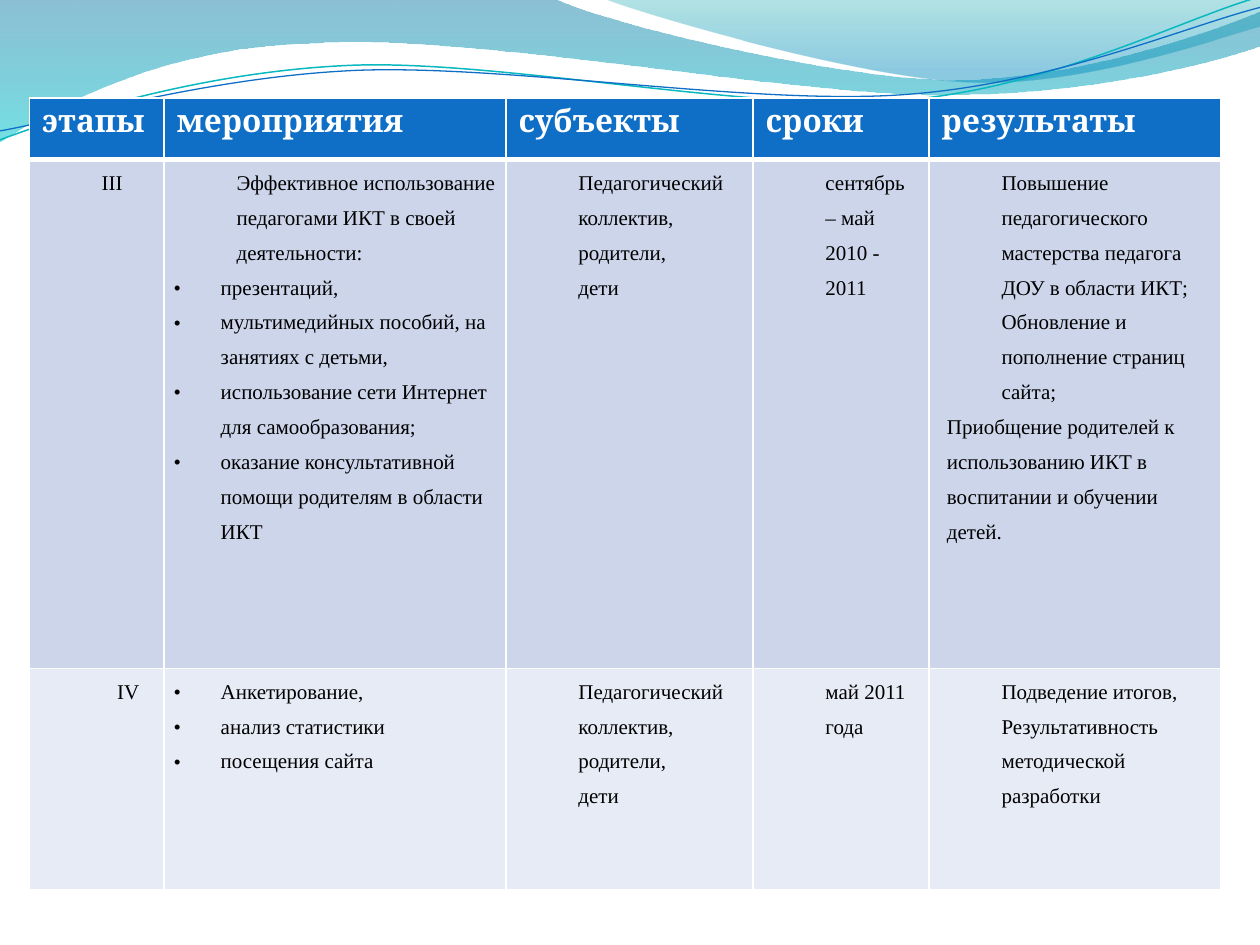
from math import cos, radians, sin

from lxml.etree import SubElement
from pptx import Presentation
from pptx.dml.color import RGBColor
from pptx.enum.text import PP_ALIGN as Align
from pptx.oxml import parse_xml
from pptx.oxml.ns import nsdecls, qn
from pptx.util import Cm, Pt

COLORS = {
    "blue": "0F6FC6", "teal": "0AB8BF", "white": "FFFFFF", "black": "000000",
    "row_dark": "CCD5EA", "row_light": "E7EBF5",
    "band_top": "0074A1", "band_bottom": "00C6CF",
    "corner_top": "00A1A9", "corner_bottom": "008BBF",
}

# Table content: each body cell is a list of (style, text) paragraphs
HEADERS = ["этапы", "мероприятия", "субъекты", "сроки", "результаты"]
SUBJECTS = [("indented", "Педагогический коллектив,"),
            ("indented", "родители,"), ("indented", "дети")]
BODY = [
    [
        [("indented", "III")],
        [("indented", "Эффективное использование педагогами ИКТ в своей деятельности:"),
         ("bullet", "презентаций,"),
         ("bullet", "мультимедийных пособий, на занятиях с детьми,"),
         ("bullet", "использование сети Интернет для самообразования;"),
         ("bullet", "оказание консультативной помощи родителям в области ИКТ")],
        SUBJECTS,
        [("indented", "сентябрь – май 2010 - 2011")],
        [("indented", "Повышение педагогического мастерства педагога ДОУ в области ИКТ;"),
         ("indented", "Обновление и пополнение страниц сайта;"),
         ("flush", "Приобщение родителей к использованию ИКТ в воспитании и обучении детей.")],
    ],
    [
        [("centered", "IV")],
        [("bullet", "Анкетирование,"), ("bullet", "анализ статистики"),
         ("bullet", "посещения сайта")],
        SUBJECTS,
        [("indented", "май 2011 года")],
        [("indented", "Подведение итогов,"),
         ("indented", "Результативность методической разработки")],
    ],
]
COLUMN_WIDTHS = [2.72, 6.89, 4.98, 3.55, 5.87]
ROW_HEIGHTS = [1.24, 10.26, 4.45]
ROW_FILLS = ["blue", "row_dark", "row_light"]

# Style: left margin and first-line indent in cm, alignment
STYLES = {
    "indented": (1.27, 0, None),
    "centered": (1.27, 0, Align.CENTER),
    "flush": (0.17, 0, None),
    "bullet": (0.95, -0.95, None),
}

# Outlines in cm: a start point, then lines (one point) or curves (three points)
BAND = [
    [(0, 0)], [(11.18, -0.03)],
    [(12.09, 0.43), (16.87, 1.6), (19.25, 1.6)],
    [(21.67, 1.6), (24.33, 0.66), (25.4, 0.23)],
    [(25.43, 0.91)],
    [(24.97, 1.12), (22.1, 1.93), (18.95, 1.91)],
    [(15.8, 1.91), (9.7, 0.71), (6.53, 0.86)],
    [(3.28, 0.91), (1.17, 2.11), (-0.03, 2.87)],
    [(0, 0)],
]
CORNER = [
    [(12.17, -0.03)],
    [(12.93, 0.28), (17.32, 1.57), (19.53, 1.65)],
    [(21.74, 1.75), (24.41, 0.81), (25.4, 0.53)],
    [(25.4, 0)], [(12.17, -0.03)],
]
TEAL_WAVE = [
    [(0, 2.82)],
    [(1.22, 2.36), (4.01, 1.45), (7.04, 1.32)],
    [(10.03, 1.19), (15.06, 2.26), (18.11, 2.03)],
    [(21.16, 1.8), (23.83, 0.38), (25.35, -0.05)],
]
BLUE_WAVE = [
    [(0, 2.64)],
    [(1.19, 2.44), (4.17, 1.55), (7.19, 1.42)],
    [(10.24, 1.3), (15.16, 2.13), (18.21, 1.91)],
    [(21.23, 1.7), (23.9, 0.53), (25.4, 0.15)],
]
# Outline, frame (left, top, width, height), gradient stops (position, colour, opacity)
GRADIENT_SHAPES = [
    (BAND, (-0.03, -0.03, 25.45, 2.9), [(0, "band_top", 45), (1, "band_bottom", 55)]),
    (CORNER, (12.17, -0.03, 13.23, 1.78), [(0, "corner_top", 30), (0.8, "corner_bottom", 45)]),
]
# Outline, frame, line colour and width
WAVES = [
    (TEAL_WAVE, (-0.05, 0.56, 25.45, 1.8), "teal", 0.85),
    (BLUE_WAVE, (-0.05, 0.76, 25.48, 1.47), "blue", 0.75),
]
WAVE_ROTATION = 357.3


def rgb(name):
    return RGBColor.from_string(COLORS[name])


def add_outline(shapes, outline, frame, rotation=0, close=True):
    """Add a curved freeform whose points are given as they lie on the slide."""
    left, top, width, height = frame
    builder = shapes.build_freeform(Cm(left), Cm(top))
    builder.add_line_segments([(Cm(left + width), Cm(top + height))], close=False)
    shape = builder.convert_to_shape()
    shape.shadow.inherit = False
    shape.rotation = rotation
    turn = radians(-rotation)
    geometry = next(shape._element.spPr.iter(qn("a:path")))
    for child in list(geometry):
        geometry.remove(child)
    for index, points in enumerate(outline):
        kind = "cubicBezTo" if len(points) == 3 else "lnTo" if index else "moveTo"
        command = SubElement(geometry, qn(f"a:{kind}"))
        for x, y in points:
            dx, dy = x - left - width / 2, y - top - height / 2
            SubElement(command, qn("a:pt"),
                       x=str(Cm(dx * cos(turn) - dy * sin(turn) + width / 2)),
                       y=str(Cm(dx * sin(turn) + dy * cos(turn) + height / 2)))
    if close:
        SubElement(geometry, qn("a:close"))
    return shape


def add_gradient_shape(slide, outline, frame, stops):
    shape = add_outline(slide.shapes, outline, frame)
    shape.line.fill.background()
    shape.fill.gradient()
    shape.fill.gradient_angle = 270
    for stop, (position, color, _) in zip(shape.fill.gradient_stops, stops):
        stop.position = position
        stop.color.rgb = rgb(color)
    for element, (_, _, opacity) in zip(shape._element.spPr.iter(qn("a:srgbClr")), stops):
        SubElement(element, qn("a:alpha"), val=str(opacity * 1000))


def add_wave(group, outline, frame, color, width):
    shape = add_outline(group.shapes, outline, frame, WAVE_ROTATION, close=False)
    shape.fill.background()
    shape.line.color.rgb = rgb(color)
    shape.line.width = Pt(width)


def set_borders(cell, top, bottom):
    widths = {"lnL": 1, "lnR": 1, "lnT": top, "lnB": bottom}
    for index, (side, width) in enumerate(widths.items()):
        cell._tc.get_or_add_tcPr().insert(index, parse_xml(
            f'<a:{side} {nsdecls("a")} w="{Pt(width)}"><a:solidFill>'
            f'<a:srgbClr val="{COLORS["white"]}"/></a:solidFill></a:{side}>'))


def add_text(paragraph, text, font_name, size, color, bold):
    run = paragraph.add_run()
    run.text = text
    run.font.name, run.font.size, run.font.bold = font_name, Pt(size), bold
    run.font.color.rgb = rgb(color)


def fill_body_cell(cell, paragraphs):
    cell.margin_left = cell.margin_right = Cm(0.19)
    cell.margin_top = cell.margin_bottom = 0
    frame = cell.text_frame
    for index, (style, text) in enumerate(paragraphs):
        paragraph = frame.add_paragraph() if index else frame.paragraphs[0]
        margin, indent, paragraph.alignment = STYLES[style]
        paragraph.line_spacing = 1.5
        properties = paragraph._p.get_or_add_pPr()
        properties.set("marL", str(Cm(margin)))
        properties.set("indent", str(Cm(indent)))
        if style == "bullet":
            SubElement(properties, qn("a:buFont"), typeface="Times New Roman")
            SubElement(properties, qn("a:buChar"), char="•")
        add_text(paragraph, text, "Times New Roman", 12, "black", False)


def add_stage_table(slide):
    table = slide.shapes.add_table(
        len(ROW_HEIGHTS), len(COLUMN_WIDTHS), Cm(0.59), Cm(1.98),
        Cm(sum(COLUMN_WIDTHS)), Cm(sum(ROW_HEIGHTS))).table
    for column, width in zip(table.columns, COLUMN_WIDTHS):
        column.width = Cm(width)
    for index, (row, height) in enumerate(zip(table.rows, ROW_HEIGHTS)):
        row.height = Cm(height)
        for column, cell in enumerate(row.cells):
            cell.fill.solid()
            cell.fill.fore_color.rgb = rgb(ROW_FILLS[index])
            set_borders(cell, 3 if index == 1 else 1, 3 if index == 0 else 1)
            if index == 0:
                add_text(cell.text_frame.paragraphs[0], HEADERS[column],
                         "Cambria", 18, "white", True)
            else:
                fill_body_cell(cell, BODY[index - 1][column])


def main():
    presentation = Presentation()
    presentation.slide_width, presentation.slide_height = Cm(25.4), Cm(19.05)
    slide = presentation.slides.add_slide(presentation.slide_layouts[6])
    # Decorative header
    for gradient_shape in GRADIENT_SHAPES:
        add_gradient_shape(slide, *gradient_shape)
    wave_group = slide.shapes.add_group_shape()
    for wave in WAVES:
        add_wave(wave_group, *wave)
    # Table of stages
    add_stage_table(slide)
    presentation.save("out.pptx")


if __name__ == "__main__":
    main()
